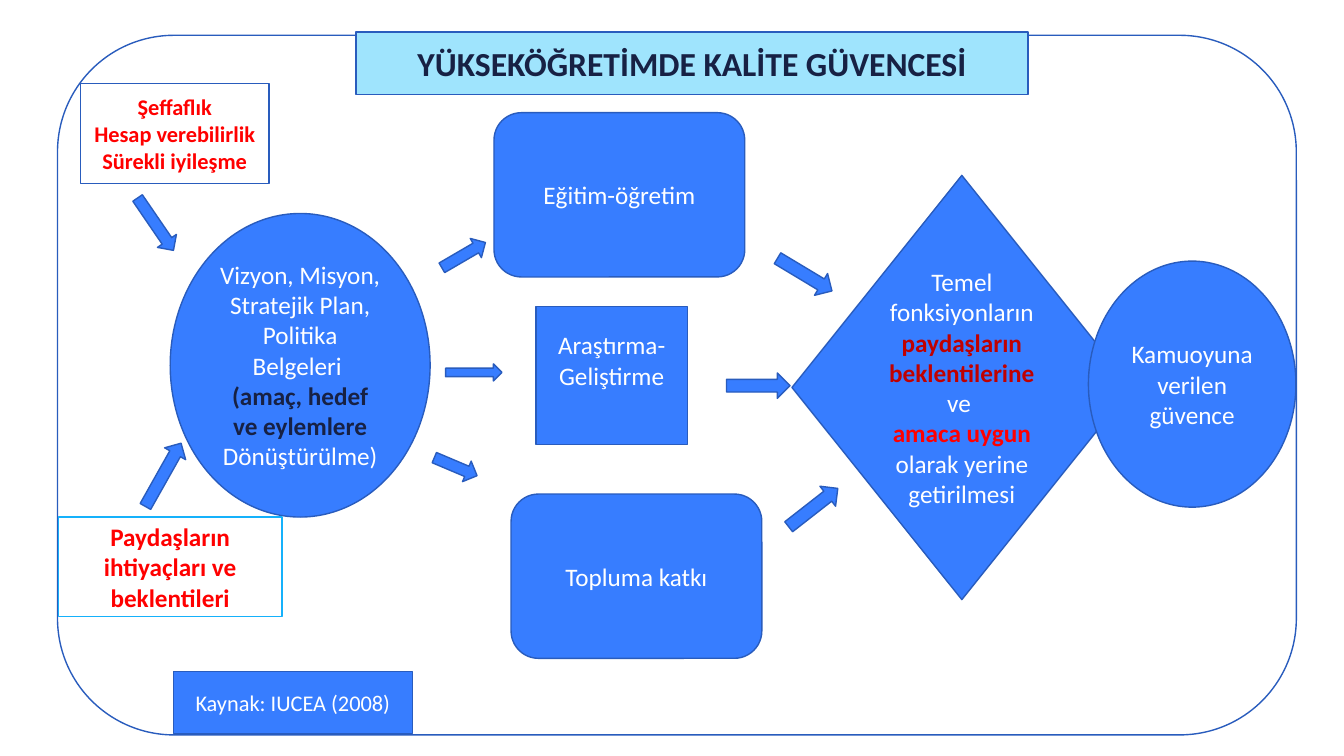
import pptx
import pptx.util
import pptx.dml.color
import pptx.enum.shapes
import pptx.enum.text

Cm, Pt = pptx.util.Cm, pptx.util.Pt
MSO = pptx.enum.shapes.MSO_SHAPE

COLORS = {"blue": "377DFF", "outline": "295CBD", "sky": "15B1FB", "pale": "9FE4FD",
          "white": "FFFFFF", "navy": "172144", "crimson": "C00000", "red": "FF0000"}

# Text: a list of paragraphs, each a list of (text, colour, bold) runs
VISION = [[("Vizyon, Misyon, Stratejik Plan, Politika Belgeleri ", "white", False)],
          [("(amaç, hedef ve eylemlere", "navy", True)],
          [("Dönüştürülme)", "white", False)]]
FUNCTIONS = [[("Temel fonksiyonların ", "white", False),
              ("paydaşların beklentilerine ", "crimson", True),
              ("ve ", "white", False)],
             [("amaca uygun ", "red", True),
              ("olarak yerine getirilmesi", "white", False)]]
VALUES = [[(line, "red", True)] for line in
          ("Şeffaflık", "Hesap verebilirlik", "Sürekli iyileşme")]
NEEDS = [[("Paydaşların ihtiyaçları ve beklentileri", "red", True)]]
TITLE = [[("YÜKSEKÖĞRETİMDE KALİTE GÜVENCESİ", "navy", True)]]


def plain(text):
    return [[(text, "white", False)]]


# Boxes: shape, (left, top, width, height) in cm, paragraphs, format
BOXES = [
    (MSO.ROUNDED_RECTANGLE, (1.45, 0.89, 31.22, 17.63), [], {"fill": None}),
    (MSO.OVAL, (4.29, 5.38, 6.55, 7.65), VISION, {}),
    (MSO.ROUNDED_RECTANGLE, (12.45, 2.84, 6.32, 4.14), plain("Eğitim-öğretim"), {}),
    (MSO.ROUNDED_RECTANGLE, (12.88, 12.45, 6.32, 4.14), plain("Topluma katkı"), {}),
    (MSO.FLOWCHART_PROCESS, (13.51, 7.72, 3.81, 3.48), plain("Araştırma-Geliştirme"),
     {"bottom": 0.9}),
    (MSO.FLOWCHART_DECISION, (19.96, 4.42, 8.56, 10.69), FUNCTIONS, {}),
    (MSO.OVAL, (27.43, 6.58, 5.23, 6.2), plain("Kamuoyuna verilen güvence"), {}),
    (MSO.RECTANGLE, (4.37, 16.92, 6.02, 1.57), plain("Kaynak: IUCEA (2008)"), {"size": 16}),
    (MSO.RECTANGLE, (8.97, 0.81, 16.94, 1.57), TITLE, {"fill": "pale", "size": 24}),
    (MSO.RECTANGLE, (2.03, 2.11, 4.75, 2.51), VALUES, {"fill": "white", "size": 16}),
    (MSO.RECTANGLE, (1.47, 13.03, 5.64, 2.51), NEEDS, {"fill": "white", "line": "sky"}),
]

# Arrows: (left, top, width, height) in cm before turning, angle in degrees
ARROWS = [
    ((3.12, 5.36, 1.6, 0.58), 55.6),
    ((3.2, 11.66, 1.83, 0.61), 299.4),
    ((11.05, 6.15, 1.27, 0.56), 329.8),
    ((11.23, 9.17, 1.42, 0.43), 0),
    ((10.9, 11.48, 1.17, 0.56), 22.9),
    ((19.48, 6.6, 1.6, 0.64), 31),
    ((18.31, 9.4, 1.6, 0.64), 0),
    ((19.71, 12.47, 1.57, 0.64), 322),
]


def rgb(name):
    return pptx.dml.color.RGBColor.from_string(COLORS[name])


def write(sp, paragraphs, size=18, bottom=0.13):
    tf = sp.text_frame
    tf.word_wrap = True
    tf.vertical_anchor = pptx.enum.text.MSO_ANCHOR.MIDDLE
    tf.margin_bottom = Cm(bottom)
    for i, runs in enumerate(paragraphs):
        p = tf.add_paragraph() if i else tf.paragraphs[0]
        p.alignment = pptx.enum.text.PP_ALIGN.CENTER
        for text, color, bold in runs:
            r = p.add_run()
            r.text = text
            r.font.name, r.font.size, r.font.bold = "Calibri", Pt(size), bold
            r.font.color.rgb = rgb(color)


def draw(s, kind, at, fill="blue", line="outline"):
    sp = s.shapes.add_shape(kind, *map(Cm, at))
    sp.shadow.inherit = False
    if fill:
        sp.fill.solid()
        sp.fill.fore_color.rgb = rgb(fill)
    else:
        sp.fill.background()
    sp.line.color.rgb = rgb(line)
    sp.line.width = Pt(1)
    return sp


def main():
    prs = pptx.Presentation()
    prs.slide_width, prs.slide_height = Cm(33.87), Cm(19.05)
    s = prs.slides.add_slide(prs.slide_layouts[6])

    # Frame, title and process boxes
    for kind, at, paragraphs, style in BOXES:
        look = {k: v for k, v in style.items() if k in ("fill", "line")}
        text_format = {k: v for k, v in style.items() if k not in look}
        sp = draw(s, kind, at, **look)
        if paragraphs:
            write(sp, paragraphs, **text_format)

    # Flow arrows
    for at, angle in ARROWS:
        draw(s, MSO.RIGHT_ARROW, at).rotation = angle

    prs.save("out.pptx")


if __name__ == "__main__":
    main()
